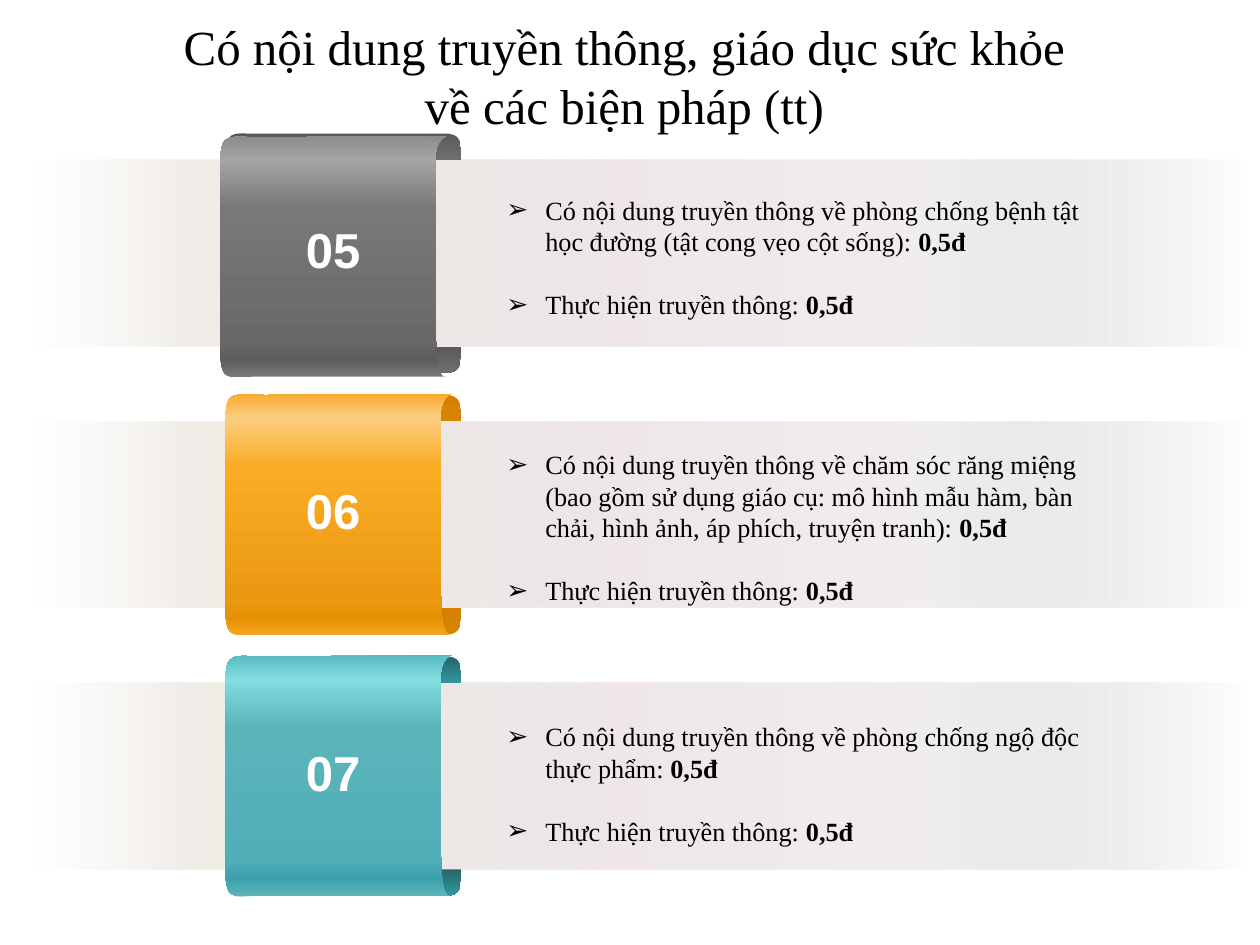
from lxml import etree
from pptx import Presentation
from pptx.dml.color import RGBColor
from pptx.enum.shapes import MSO_SHAPE
from pptx.enum.text import MSO_ANCHOR, PP_ALIGN
from pptx.oxml.ns import qn
from pptx.util import Inches, Pt

RECT = MSO_SHAPE.RECTANGLE
CENTER, LEFT = PP_ALIGN.CENTER, PP_ALIGN.LEFT
TOP, MIDDLE = MSO_ANCHOR.TOP, MSO_ANCHOR.MIDDLE
TITLE_ONLY = 5
SERIF, SANS = "Times New Roman", "Arial"
BLACK, WHITE = RGBColor(0, 0, 0), RGBColor(255, 255, 255)

FIRST_TOP, ROW_PITCH = 1.27, 4.15 / 2
BAND_LEFT, BAND_W, BAND_H = 0.02, 9.88, 1.48
TAB_LEFT = 1.79

# Gradient stops: position in percent, colour, opacity in percent
BAND_STOPS = [
    (0, RGBColor(0xC8, 0xC7, 0xC6), 0), (25, RGBColor(0xF0, 0xED, 0xEF), 100),
    (50, RGBColor(0xEE, 0xE6, 0xEB), 100), (85, RGBColor(0xE2, 0xDC, 0xD1), 52),
    (98, RGBColor(0xEF, 0xEB, 0xE5), 0)]
FRONT_POSITIONS = (0, 7, 15, 70, 90, 100)
GREY = [RGBColor(v, v, v) for v in (0x78, 0x5D, 0x69, 0x78, 0xA5, 0x8C)]
GREY_FOLD = [RGBColor(0x5A, 0x5A, 0x5A), RGBColor(0x6E, 0x6E, 0x6E)]
ORANGE = [RGBColor(0xF5, 0xA5, 0x1E), RGBColor(0xE6, 0x91, 0x05), RGBColor(0xEB, 0x99, 0x12),
          RGBColor(0xFA, 0xAC, 0x25), RGBColor(0xFC, 0xCE, 0x82), RGBColor(0xFA, 0xAA, 0x2D)]
ORANGE_FOLD = [RGBColor(0xD7, 0x80, 0x00), RGBColor(0xD7, 0x85, 0x00)]
TEAL = [RGBColor(0x5C, 0xB5, 0xBB), RGBColor(0x3C, 0xA0, 0xAF), RGBColor(0x51, 0xAF, 0xB8),
        RGBColor(0x5C, 0xB4, 0xBB), RGBColor(0x82, 0xDD, 0xDE), RGBColor(0x58, 0xBA, 0xC3)]
TEAL_FOLD = [RGBColor(0x26, 0x65, 0x68), RGBColor(0x32, 0x96, 0xA0)]

# Outlines in inches from the tab's left and the band's top; three points make a curve
FOLD = [[(1.87, 0)], [(1.71, 0)], [(0, 0)], [(0.01, -0.18), (0.01, -0.22), (0.17, -0.21)],
        [(1.74, -0.21)], [(1.87, -0.21), (1.87, -0.14), (1.87, 0)]]
FRONT = [[(1.79, -0.22)], [(0.32, -0.21)], [(0.06, -0.21), (0, -0.26), (0, 0)],
         [(0, 0.47), (0, 0.93), (0, 1.4)], [(-0.01, 1.76), (0.05, 1.69), (0.26, 1.69)],
         [(1.8, 1.69)], [(1.74, 1.7), (1.71, 1.63), (1.71, 1.33)],
         [(1.71, 0.96), (1.71, 0.59), (1.71, 0.21)],
         [(1.71, -0.04), (1.68, -0.16), (1.79, -0.22)]]

# Number, front colours, fold colours, front offset, text top, text height, statement
ROWS = [
    ("05", GREY, GREY_FOLD, (-0.04, 0.03), 1.49, 1.11,
     "Có nội dung truyền thông về phòng chống bệnh tật học đường (tật cong vẹo cột sống): "),
    ("06", ORANGE, ORANGE_FOLD, (0, 0), 3.51, 1.36,
     "Có nội dung truyền thông về chăm sóc răng miệng (bao gồm sử dụng giáo cụ: "
     "mô hình mẫu hàm, bàn chải, hình ảnh, áp phích, truyện tranh): "),
    ("07", TEAL, TEAL_FOLD, (0, 0), 5.67, 1.11,
     "Có nội dung truyền thông về phòng chống ngộ độc thực phẩm: "),
]
ACTION, SCORE = "Thực hiện truyền thông: ", "0,5đ"


def paint(sp, stops, angle):
    """Give a shape a linear gradient and no outline or shadow."""
    sp.shadow.inherit = False
    sp.line.fill.background()
    sp.fill.background()
    spPr = sp._element.spPr
    grad = etree.Element(qn("a:gradFill"), rotWithShape="1")
    gs_list = etree.SubElement(grad, qn("a:gsLst"))
    for position, color, opacity in stops:
        gs = etree.SubElement(gs_list, qn("a:gs"), pos=str(position * 1000))
        clr = etree.SubElement(gs, qn("a:srgbClr"), val=str(color))
        if opacity < 100:
            etree.SubElement(clr, qn("a:alpha"), val=str(opacity * 1000))
    etree.SubElement(grad, qn("a:lin"), ang=str(angle * 60000), scaled="0")
    spPr.replace(spPr.find(qn("a:noFill")), grad)


def add_outline(s, outline, left, top, stops, angle, flip=1):
    """Build a freeform through the end points, then bend its curved segments."""
    steps = [[(Inches(left + x), Inches(top + flip * y)) for x, y in step] for step in outline]
    ends = [step[-1] for step in steps]
    builder = s.shapes.build_freeform(*ends[0])
    builder.add_line_segments(ends[1:], close=True)
    sp = builder.convert_to_shape()
    segments = list(sp._element.iter(qn("a:lnTo")))
    for step, segment in zip(steps[1:], segments):
        if len(step) == 3:
            curve = etree.Element(qn("a:cubicBezTo"))
            for x, y in step:
                etree.SubElement(curve, qn("a:pt"), x=str(x - sp.left), y=str(y - sp.top))
            segment.getparent().replace(segment, curve)
    paint(sp, stops, angle)


def add_band(s, top):
    sp = s.shapes.add_shape(RECT, Inches(BAND_LEFT), Inches(top), Inches(BAND_W), Inches(BAND_H))
    paint(sp, BAND_STOPS, 180)


def add_tab(s, top, front, fold, offset):
    fold_stops = [(0, fold[0], 100), (100, fold[1], 100)]
    add_outline(s, FOLD, TAB_LEFT, top, fold_stops, 90)
    add_outline(s, FOLD, TAB_LEFT, top + BAND_H, fold_stops, 90, flip=-1)
    front_stops = [(pos, color, 100) for pos, color in zip(FRONT_POSITIONS, front)]
    add_outline(s, FRONT, TAB_LEFT + offset[0], top + offset[1], front_stops, 270)


def place(sp, left, top, width, height, anchor=TOP, wrap=True):
    sp.left, sp.top, sp.width, sp.height = map(Inches, (left, top, width, height))
    tf = sp.text_frame
    tf.word_wrap, tf.vertical_anchor = wrap, anchor
    return tf


def style(p, size, name, color, bold=False, align=LEFT):
    p.alignment = align
    font = p.font
    font.size, font.name, font.bold = Pt(size), name, bold
    font.color.rgb = color


def add_bullet(p):
    pPr = p._p.get_or_add_pPr()
    pPr.set("marL", str(Inches(0.31)))
    pPr.set("indent", str(-Inches(0.31)))
    defaults = pPr.find(qn("a:defRPr"))
    defaults.addprevious(etree.Element(qn("a:buFont"), typeface=SANS))
    defaults.addprevious(etree.Element(qn("a:buChar"), char="➢"))


def add_title(s):
    tf = place(s.shapes.title, 1.32, 0.08, 7.27, 1.04, wrap=False)
    p = tf.paragraphs[0]
    p.text = "Có nội dung truyền thông, giáo dục sức khỏe\nvề các biện pháp (tt)"
    style(p, 28, SERIF, BLACK, align=CENTER)


def add_number(s, number, top):
    tf = place(s.shapes.add_textbox(0, 0, 0, 0), 2.33, top + 0.42, 0.64, 0.57, MIDDLE, False)
    p = tf.paragraphs[0]
    p.text = number
    style(p, 28, SANS, WHITE, bold=True)


def add_statements(s, top, height, statements):
    tf = place(s.shapes.add_textbox(0, 0, 0, 0), 3.92, top, 4.77, height)
    for i, statement in enumerate(statements):
        p = tf.add_paragraph() if i else tf.paragraphs[0]
        style(p, 15, SERIF, BLACK)
        p.space_before = Pt(18 if i else 0)
        p.add_run().text = statement
        r = p.add_run()
        r.text, r.font.bold = SCORE, True
        add_bullet(p)


def main():
    prs = Presentation()
    prs.slide_width, prs.slide_height = Inches(10), Inches(7.5)
    s = prs.slides.add_slide(prs.slide_layouts[TITLE_ONLY])
    add_title(s)
    for i, (number, front, fold, offset, text_top, text_h, statement) in enumerate(ROWS):
        top = FIRST_TOP + i * ROW_PITCH
        add_band(s, top)
        add_tab(s, top, front, fold, offset)
        add_number(s, number, top)
        add_statements(s, text_top, text_h, (statement, ACTION))
    prs.save("out.pptx")


if __name__ == "__main__":
    main()
